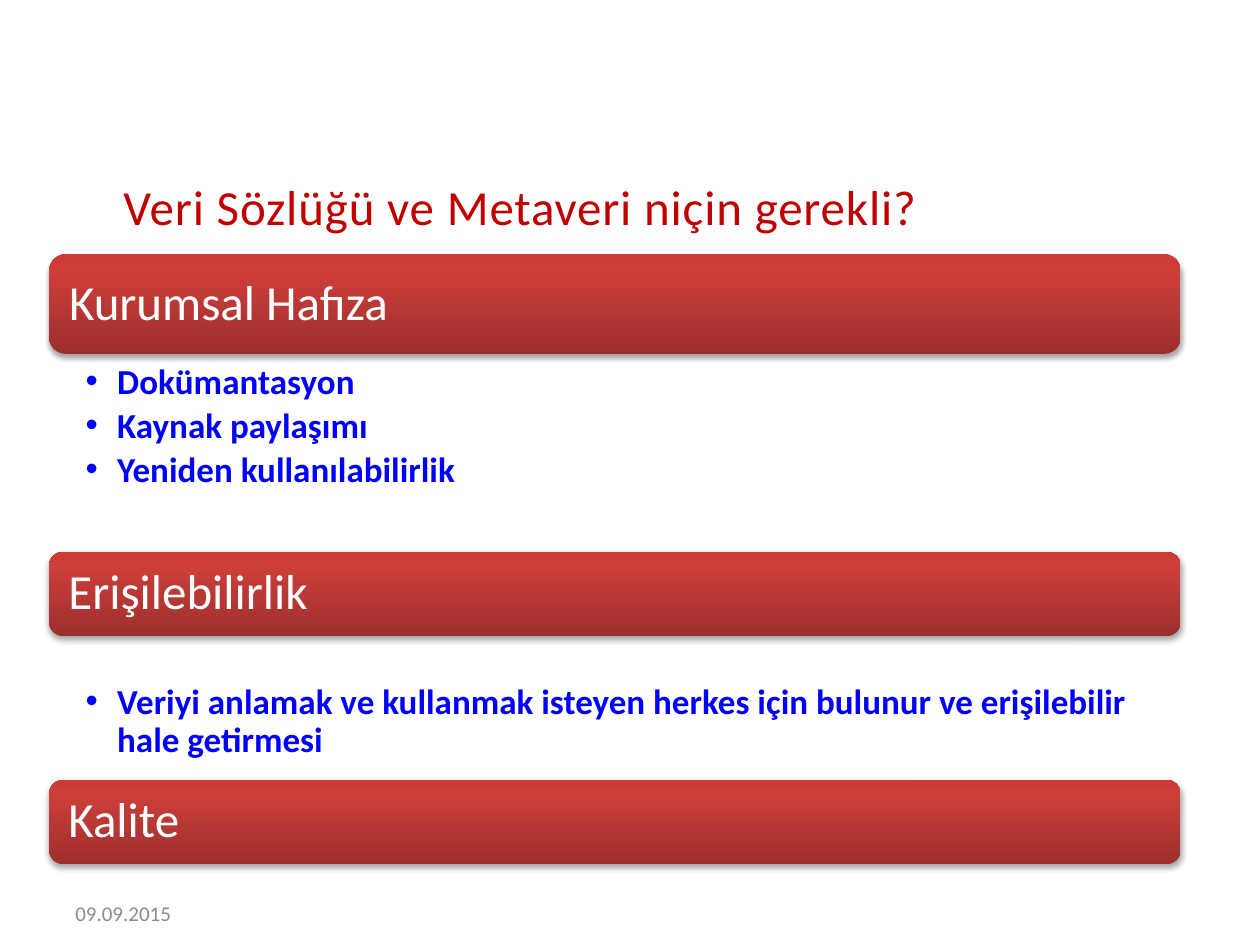
from dataclasses import dataclass

from lxml.etree import SubElement
from pptx import Presentation
from pptx.dml.color import RGBColor
from pptx.enum.shapes import MSO_SHAPE
from pptx.enum.text import MSO_ANCHOR, MSO_AUTO_SIZE, PP_ALIGN
from pptx.oxml import parse_xml
from pptx.oxml.ns import nsdecls, qn
from pptx.util import Inches, Pt

SLIDE_WIDTH, SLIDE_HEIGHT = Inches(10), Inches(7.5)


@dataclass(frozen=True)
class Theme:
    font: str = "Calibri"
    title: str = "C00000"
    heading: str = "FFFFFF"
    bullet: str = "0000FF"
    date: str = "8C8C8C"
    shadow: str = "000000"
    bar_stops: tuple = ((0, "9C2F2D"), (80, "CB3E3A"), (100, "CE3B37"))
    heading_size: int = 28
    bullet_size: int = 20
    date_size: int = 12


@dataclass(frozen=True)
class Frame:
    """A rectangle in percent of the slide's width and height."""
    left: float
    top: float
    width: float
    height: float

    def box(self) -> tuple:
        return (round(SLIDE_WIDTH * self.left / 100), round(SLIDE_HEIGHT * self.top / 100),
                round(SLIDE_WIDTH * self.width / 100), round(SLIDE_HEIGHT * self.height / 100))


@dataclass(frozen=True)
class Section:
    heading: str
    top: float
    height: float
    points: tuple = ()
    points_top: float = 0
    points_height: float = 0


THEME = Theme()
COLUMN_LEFT, COLUMN_WIDTH = 3.9, 89.8
SECTIONS = (
    Section("Kurumsal Hafıza", 26.93, 10.53,
            ("Dokümantasyon", "Kaynak paylaşımı", "Yeniden kullanılabilirlik"), 38.13, 19.5),
    Section("Erişilebilirlik", 58.4, 8.93,
            ("Veriyi anlamak ve kullanmak isteyen herkes için bulunur "
             "ve erişilebilir hale getirmesi",), 72, 8.27),
    Section("Kalite", 82.53, 8.93),
)


def style(paragraph, size: int, color: str, bold: bool = False) -> None:
    paragraph.font.name = THEME.font
    paragraph.font.size = Pt(size)
    paragraph.font.bold = bold
    paragraph.font.color.rgb = RGBColor.from_string(color)


def set_insets(frame, left: float, top: float, right: float, bottom: float) -> None:
    frame.margin_left, frame.margin_top = Inches(left), Inches(top)
    frame.margin_right, frame.margin_bottom = Inches(right), Inches(bottom)


def place(shape, frame: Frame) -> None:
    shape.left, shape.top, shape.width, shape.height = frame.box()


def paint_bar(bar) -> None:
    """Give the bar its upward gradient and soft shadow below."""
    bar.line.fill.background()
    bar.shadow.inherit = False
    stops = "".join(f'<a:gs pos="{pos * 1000}"><a:srgbClr val="{color}"/></a:gs>'
                    for pos, color in THEME.bar_stops)
    gradient = parse_xml(f'<a:gradFill {nsdecls("a")} rotWithShape="1"><a:gsLst>{stops}</a:gsLst>'
                         '<a:lin ang="16200000" scaled="0"/></a:gradFill>')
    properties = bar._element.spPr
    properties.find(qn("a:prstGeom")).addnext(gradient)
    shadow = SubElement(properties.find(qn("a:effectLst")), qn("a:outerShdw"),
                        blurRad=str(Pt(3.1)), dist=str(Pt(1.8)), dir="5400000", rotWithShape="0")
    color = SubElement(shadow, qn("a:srgbClr"), val=THEME.shadow)
    SubElement(color, qn("a:alpha"), val="35000")


def add_heading(slide, section: Section) -> None:
    frame = Frame(COLUMN_LEFT, section.top, COLUMN_WIDTH, section.height)
    bar = slide.shapes.add_shape(MSO_SHAPE.ROUNDED_RECTANGLE, *frame.box())
    paint_bar(bar)
    text = bar.text_frame
    text.vertical_anchor = MSO_ANCHOR.MIDDLE
    set_insets(text, 0.12, 0.12, 0.12, 0.12)
    heading = text.paragraphs[0]
    heading.text = section.heading
    heading.alignment = PP_ALIGN.LEFT
    heading.line_spacing = 0.9
    style(heading, THEME.heading_size, THEME.heading)


def fill_points(body, section: Section) -> None:
    place(body, Frame(COLUMN_LEFT, section.points_top, COLUMN_WIDTH, section.points_height))
    text = body.text_frame
    text.text = "\n".join(section.points)
    text.auto_size = MSO_AUTO_SIZE.NONE
    set_insets(text, 0.29, 0.03, 0.16, 0.03)
    for point in text.paragraphs:
        indents = point._p.get_or_add_pPr()
        indents.set("marL", str(Inches(0.25)))
        indents.set("indent", str(Inches(-0.25)))
        point.line_spacing = 0.9
        point.space_before, point.space_after = Pt(0), Pt(3.5)
        style(point, THEME.bullet_size, THEME.bullet, bold=True)


def fill_title(title) -> None:
    place(title, Frame(8.8, 18, 90, 9.47))
    text = title.text_frame
    text.text = "Veri Sözlüğü ve Metaveri niçin gerekli?"
    text.auto_size = MSO_AUTO_SIZE.NONE
    text.vertical_anchor = MSO_ANCHOR.TOP
    heading = text.paragraphs[0]
    heading.alignment = PP_ALIGN.LEFT
    style(heading, THEME.heading_size, THEME.title)
    heading.runs[0]._r.get_or_add_rPr().set("spc", "50")


def add_date(slide) -> None:
    text = slide.shapes.add_textbox(*Frame(5, 94, 23.3, 5.33).box()).text_frame
    text.word_wrap = True
    text.vertical_anchor = MSO_ANCHOR.MIDDLE
    text.text = "09.09.2015"
    style(text.paragraphs[0], THEME.date_size, THEME.date)


def main() -> None:
    presentation = Presentation()
    presentation.slide_width, presentation.slide_height = SLIDE_WIDTH, SLIDE_HEIGHT
    two_lists = presentation.slide_layouts.get_by_name("Two Content")
    slide = presentation.slides.add_slide(two_lists)
    title, *bodies = slide.placeholders
    fill_title(title)
    for section in SECTIONS:
        add_heading(slide, section)
    for body, section in zip(bodies, (s for s in SECTIONS if s.points)):
        fill_points(body, section)
    add_date(slide)
    presentation.save("out.pptx")


if __name__ == "__main__":
    main()
